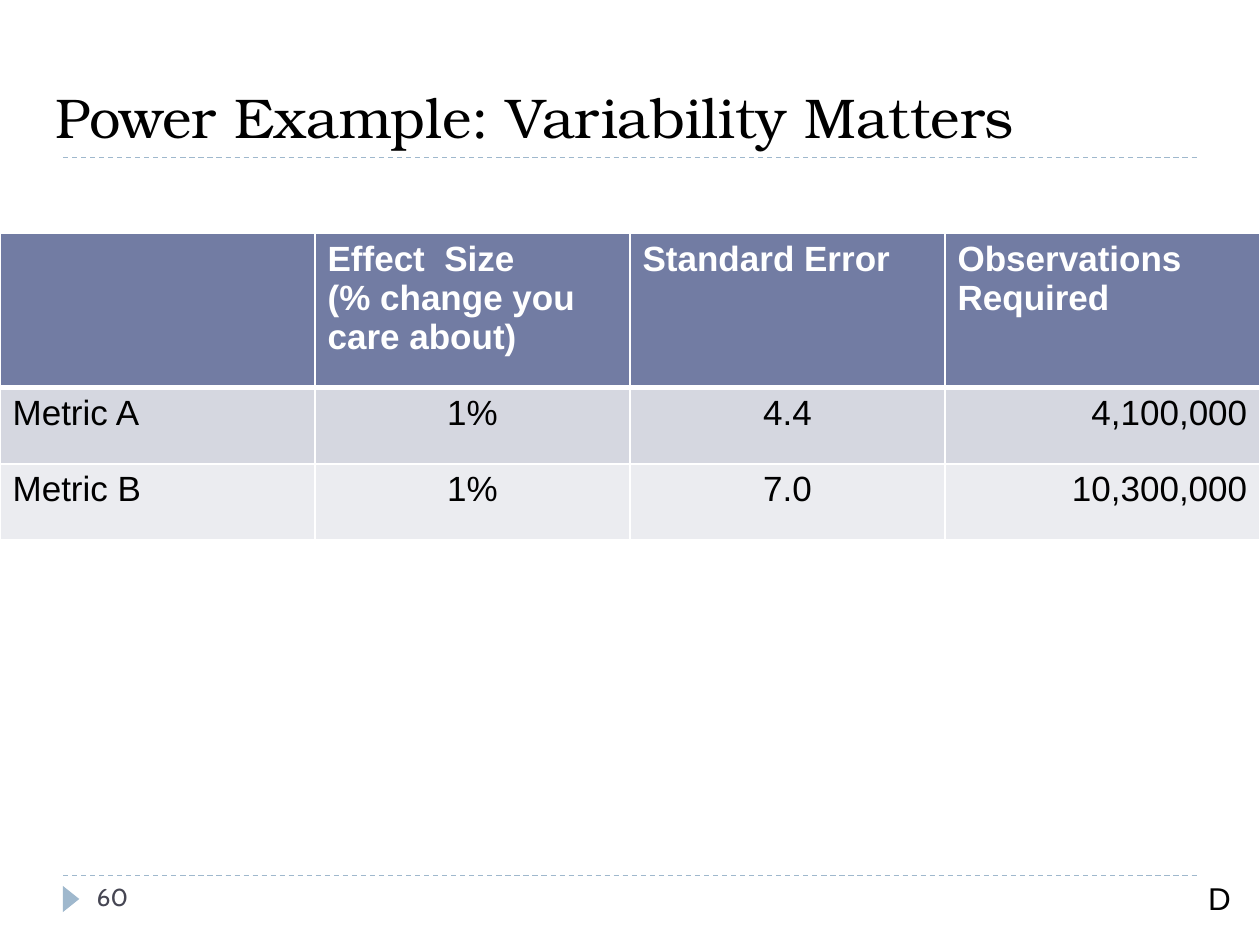
from lxml.etree import SubElement
from pptx import Presentation
from pptx.dml.color import RGBColor
from pptx.enum.dml import MSO_LINE
from pptx.enum.shapes import MSO_CONNECTOR, MSO_SHAPE
from pptx.enum.text import MSO_ANCHOR as Anchor, MSO_AUTO_SIZE as AutoSize, PP_ALIGN as Align
from pptx.oxml.ns import qn
from pptx.util import Pt

COLORS = {
    "text": "000000",
    "white": "FFFFFF",
    "accent": "9FB8CD",
    "number": "464653",
    "header": "727CA3",
    "band_dark": "D5D7E0",
    "band_light": "EBECF0",
}
ROWS = [
    ["", "Effect  Size\n(% change you care about)", "Standard Error", "Observations Required"],
    ["Metric A", "1%", "4.4", "4,100,000"],
    ["Metric B", "1%", "7.0", "10,300,000"],
]
ROW_FILLS = ["header", "band_dark", "band_light"]
ROW_HEIGHTS = [88.3, 43.6, 43.6]
BODY_ALIGNMENTS = [Align.LEFT, Align.CENTER, Align.CENTER, Align.RIGHT]
COLUMN_WIDTH = 180


def rgb(name):
    return RGBColor.from_string(COLORS[name])


def format_text(text_frame, font_name, size, color, bold=False, alignment=Align.LEFT):
    for paragraph in text_frame.paragraphs:
        paragraph.alignment = alignment
        for run in paragraph.runs:
            run.font.name = font_name
            run.font.size = Pt(size)
            run.font.bold = bold
            run.font.color.rgb = rgb(color)


def add_title(slide, text):
    title = slide.shapes.title
    title.left, title.top, title.width, title.height = Pt(31.7), Pt(21.6), Pt(671), Pt(64.8)
    text_frame = title.text_frame
    text_frame.text = text
    text_frame.word_wrap = True
    text_frame.auto_size = AutoSize.NONE
    text_frame.vertical_anchor = Anchor.BOTTOM
    text_frame.margin_left = text_frame.margin_right = 0
    text_frame.margin_top = text_frame.margin_bottom = 0
    text_frame.paragraphs[0].line_spacing = 0.95
    format_text(text_frame, "TeX Gyre Bonum", 32, "text")


def add_rule(slide, y):
    rule = slide.shapes.add_connector(MSO_CONNECTOR.STRAIGHT, Pt(36), Pt(y), Pt(684), Pt(y))
    rule.line.color.rgb = rgb("accent")
    rule.line.width = Pt(0.75)
    rule.line.dash_style = MSO_LINE.DASH
    SubElement(rule.element.spPr, qn("a:effectLst"))


def add_marker(slide):
    marker = slide.shapes.add_shape(
        MSO_SHAPE.ISOSCELES_TRIANGLE, Pt(33.1), Pt(509), Pt(15), Pt(9.4))
    marker.rotation = 90
    marker.shadow.inherit = False
    marker.fill.solid()
    marker.fill.fore_color.rgb = rgb("accent")
    marker.line.fill.background()


def add_label(slide, text, left, top, width, font_name, size, color, wrap=True):
    label = slide.shapes.add_textbox(Pt(left), Pt(top), Pt(width), Pt(29))
    text_frame = label.text_frame
    text_frame.text = text
    text_frame.word_wrap = wrap
    if not wrap:
        text_frame.auto_size = AutoSize.SHAPE_TO_FIT_TEXT
    format_text(text_frame, font_name, size, color)


def set_borders(cell, widths):
    properties = cell._tc.get_or_add_tcPr()
    for side, width in widths.items():
        line = SubElement(properties, qn(f"a:ln{side}"), w=str(Pt(width)))
        fill = SubElement(line, qn("a:solidFill"))
        SubElement(fill, qn("a:srgbClr"), val=COLORS["white"])


def add_metrics_table(slide):
    frame = slide.shapes.add_table(
        len(ROWS), len(ROWS[0]), 0, Pt(133.2),
        Pt(COLUMN_WIDTH * len(ROWS[0])), Pt(sum(ROW_HEIGHTS)))
    table = frame.table
    for column in table.columns:
        column.width = Pt(COLUMN_WIDTH)
    for row_index, values in enumerate(ROWS):
        table.rows[row_index].height = Pt(ROW_HEIGHTS[row_index])
        is_header = row_index == 0
        # The line under the header is heavier than the rest
        borders = {"L": 1, "R": 1, "T": 3 if row_index == 1 else 1, "B": 3 if is_header else 1}
        for column_index, value in enumerate(values):
            cell = table.cell(row_index, column_index)
            cell.text_frame.text = value
            format_text(
                cell.text_frame, "Arial", 20, "white" if is_header else "text", is_header,
                Align.LEFT if is_header else BODY_ALIGNMENTS[column_index])
            set_borders(cell, borders)
            cell.fill.solid()
            cell.fill.fore_color.rgb = rgb(ROW_FILLS[row_index])


def main():
    presentation = Presentation()
    presentation.slide_width, presentation.slide_height = Pt(720), Pt(540)
    slide = presentation.slides.add_slide(presentation.slide_layouts[5])

    # Rules and footer marker
    for y in (500.4, 90):
        add_rule(slide, y)
    add_marker(slide)

    # Title and table
    add_title(slide, "Power Example: Variability Matters")
    add_metrics_table(slide)

    # Footer labels
    add_label(slide, "60", 48.2, 500.4, 156, "Cabin", 14, "number")
    add_label(slide, "D", 683.3, 499, 27.4, "Arial", 18, "text", wrap=False)

    presentation.save("out.pptx")


if __name__ == "__main__":
    main()
